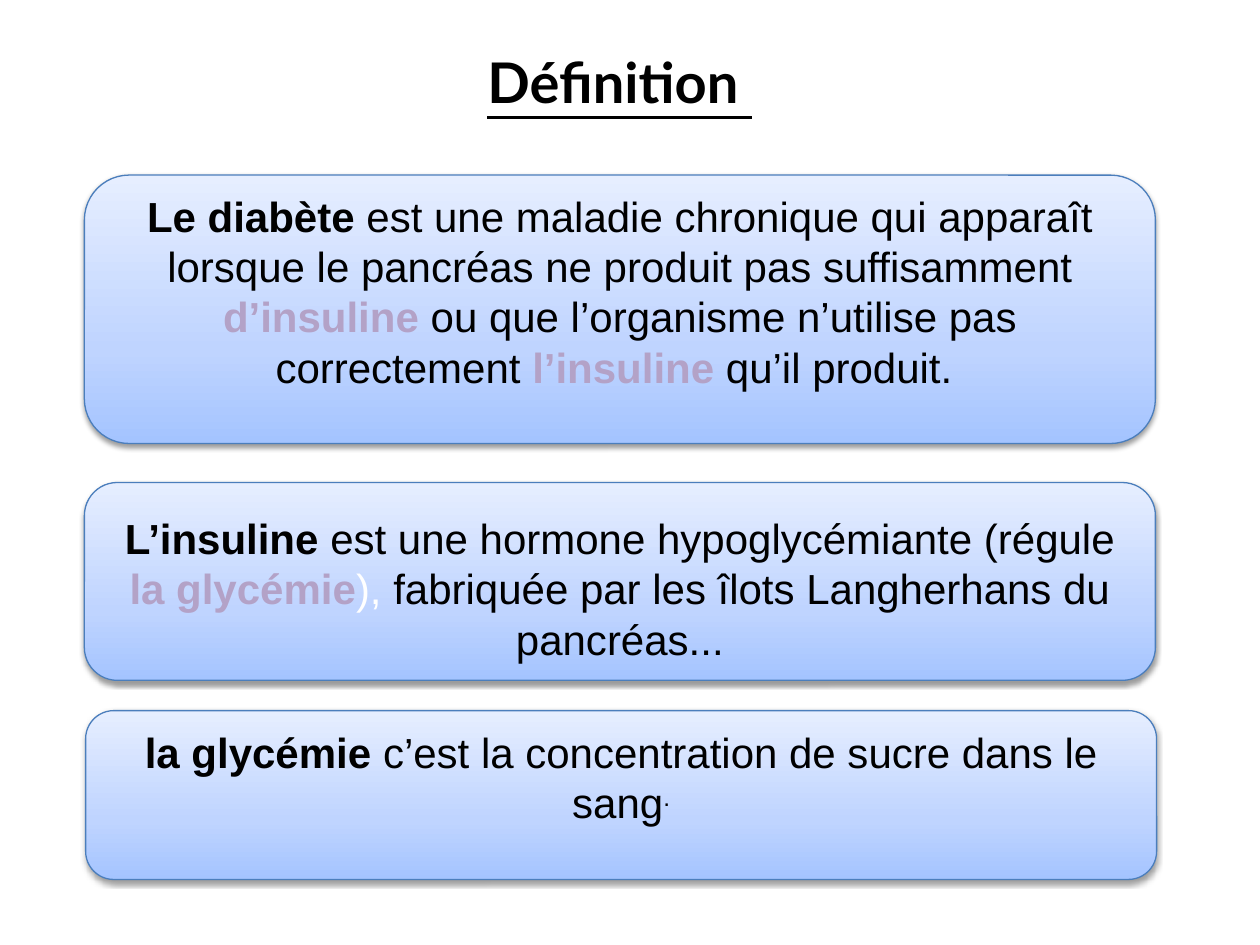
from copy import deepcopy

from lxml.etree import SubElement
from pptx import Presentation
from pptx.dml.color import RGBColor
from pptx.enum.shapes import MSO_SHAPE as Shape
from pptx.enum.text import MSO_ANCHOR as Anchor, PP_ALIGN as Align
from pptx.oxml.ns import qn
from pptx.util import Inches, Pt

BLACK = RGBColor(0x00, 0x00, 0x00)
WHITE = RGBColor(0xFF, 0xFF, 0xFF)
LILAC = RGBColor(0xB3, 0xA2, 0xC7)
BORDER = RGBColor(0x4B, 0x7E, 0xBC)
GRADIENT = (
    (0, RGBColor(0xA4, 0xC4, 0xFF)),
    (0.35, RGBColor(0xBF, 0xD4, 0xFF)),
    (1, RGBColor(0xE6, 0xEE, 0xFF)),
)

TITLE = {"name": "Lato", "size": Pt(32), "bold": True, "underline": True, "color": BLACK}
PLAIN = {"name": "Arial", "size": Pt(24), "bold": False, "color": BLACK}
TERM = {**PLAIN, "bold": True}
KEYWORD = {**TERM, "color": LILAC}
PALE = {**PLAIN, "color": WHITE}
RAISED = {**PLAIN, "baseline": "30000"}

CARDS = (
    ((0.67, 1.39, 8.5, 2.13), 0.05, 0.34, (
        ("Le diabète ", TERM),
        ("est une maladie chronique qui apparaît lorsque le pancréas ne produit pas suffisamment ", PLAIN),
        ("d’insuline", KEYWORD),
        (" ou que l’organisme n’utilise pas correctement ", PLAIN),
        ("l’insuline", KEYWORD),
        (" qu’il produit. ", PLAIN),
    )),
    ((0.67, 3.83, 8.5, 1.57), 0.15, 0.05, (
        ("L’insuline ", TERM),
        ("est une hormone hypoglycémiante (régule ", PLAIN),
        ("la glycémie", KEYWORD),
        ("),", PALE),
        (" fabriquée par les îlots Langherhans du pancréas...", PLAIN),
    )),
    ((0.68, 5.64, 8.5, 1.34), 0.05, 0.34, (
        ("la glycémie ", TERM),
        ("c’est la concentration de sucre dans le sang", PLAIN),
        (".", RAISED),
    )),
)


class DefinitionSlide:
    """Hold the card style and the slide being built."""

    def __init__(self, presentation):
        self.slide = presentation.slides.add_slide(presentation.slide_layouts[6])

    def fill_text(self, shape, runs, top=0.05, bottom=0.05):
        frame = shape.text_frame
        settings = {
            "word_wrap": True,
            "vertical_anchor": Anchor.MIDDLE,
            "margin_top": Inches(top),
            "margin_bottom": Inches(bottom),
        }
        for name, value in settings.items():
            setattr(frame, name, value)
        paragraph = frame.paragraphs[0]
        paragraph.alignment = Align.CENTER
        for text, style in runs:
            run = paragraph.add_run()
            run.text = text
            for name, value in style.items():
                if name == "color":
                    run.font.color.rgb = value
                elif name == "baseline":
                    run._r.get_or_add_rPr().set(name, value)
                else:
                    setattr(run.font, name, value)

    def title(self, box, text):
        shape = self.slide.shapes.add_textbox(*map(Inches, box))
        self.fill_text(shape, [(text, TITLE)])

    def card(self, box, top, bottom, runs):
        shape = self.slide.shapes.add_shape(Shape.ROUNDED_RECTANGLE, *map(Inches, box))
        self.paint(shape)
        shape.line.color.rgb = BORDER
        shape.line.width = Pt(0.75)
        self.cast_shadow(shape)
        self.fill_text(shape, runs, top, bottom)

    def paint(self, shape):
        fill = shape.fill
        fill.gradient()
        fill.gradient_angle = 90
        stops = shape._element.spPr.find(".//" + qn("a:gsLst"))
        stops.insert(1, deepcopy(stops[0]))
        for stop, (position, color) in zip(fill.gradient_stops, GRADIENT):
            stop.position = position
            stop.color.rgb = color

    def cast_shadow(self, shape):
        shape.shadow.inherit = False
        effects = shape._element.spPr.find(qn("a:effectLst"))
        shadow = SubElement(effects, qn("a:outerShdw"), blurRad=str(Pt(3.1)),
                            dist=str(Pt(1.6)), dir="5400000", rotWithShape="0")
        color = SubElement(shadow, qn("a:srgbClr"), val=str(BLACK))
        SubElement(color, qn("a:alpha"), val="38000")


def main():
    presentation = Presentation()
    presentation.slide_width = Inches(10)
    presentation.slide_height = Inches(7.5)
    definition = DefinitionSlide(presentation)
    definition.title((0.42, 0.13, 9, 1.02), "Définition ")
    for card in CARDS:
        definition.card(*card)
    presentation.save("out.pptx")


if __name__ == "__main__":
    main()
